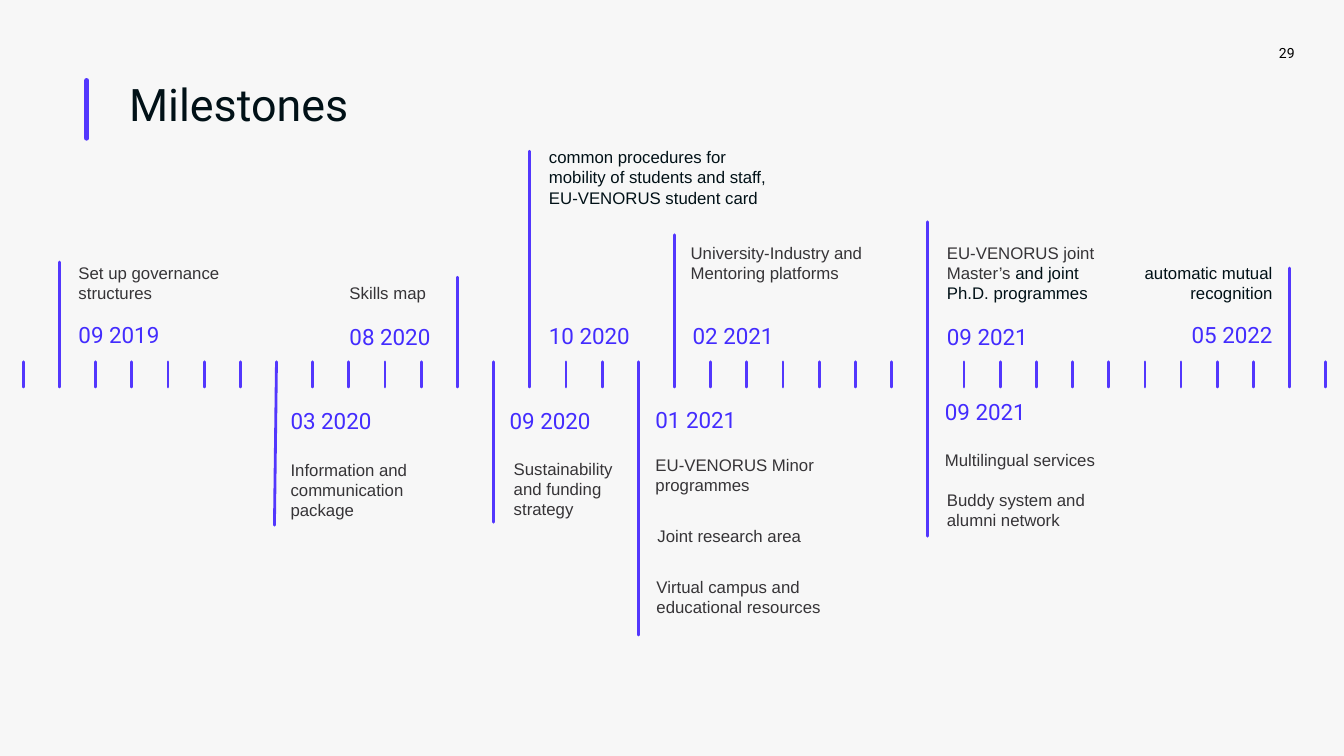
from dataclasses import dataclass

from lxml import etree
from pptx import Presentation
from pptx.dml.color import RGBColor
from pptx.enum.shapes import MSO_CONNECTOR
from pptx.enum.text import MSO_ANCHOR, MSO_AUTO_SIZE, PP_ALIGN
from pptx.oxml.ns import qn
from pptx.util import Inches, Pt

STRAIGHT = MSO_CONNECTOR.STRAIGHT
TOP, MIDDLE = MSO_ANCHOR.TOP, MSO_ANCHOR.MIDDLE
FIXED = MSO_AUTO_SIZE.NONE
LEFT, RIGHT = PP_ALIGN.LEFT, PP_ALIGN.RIGHT


@dataclass(frozen=True)
class Theme:
    back: str = "F7F7F7"
    line: str = "5337FD"
    date: str = "432CFE"
    body: str = "363437"
    dark: str = "011117"
    black: str = "000000"
    head_font: str = "Roboto"
    body_font: str = "Arial"
    title_size: float = 32
    date_size: float = 16
    body_size: float = 12
    number_size: float = 10
    tick_width: float = 2
    bar_width: float = 3.75


@dataclass(frozen=True)
class Note:
    dx: float
    dy: float
    w: float
    lines: int
    text: str
    dark_text: str = ""


@dataclass(frozen=True)
class Milestone:
    month: int
    date: str
    dx: float
    dy: float
    notes: tuple
    align: object = LEFT


T = Theme()
MONTHS = 36
TICK = 0.25
DATE_W, DATE_H = 1.87, 0.37

STEMS = {
    1: (-0.99, TICK), 7: (0, 1.62), 12: (-0.84, TICK),
    13: (0, 1.59), 14: (-2.09, TICK), 17: (0, 2.71),
    18: (-1.26, TICK), 25: (-1.39, 1.73), 35: (-0.93, TICK),
}
LEANS = {7: -0.02}

MILESTONES = (
    Milestone(1, "09 2019", 0.19, -0.45, (
        Note(0.19, -1.03, 1.54, 2, "Set up governance structures"),)),
    Milestone(7, "03 2020", 0.14, 0.4, (
        Note(0.14, 0.92, 1.54, 3, "Information and communication package"),)),
    Milestone(12, "08 2020", -1.07, -0.43, (
        Note(-1.07, -0.83, 1.54, 1, "Skills map"),)),
    Milestone(13, "09 2020", 0.16, 0.4, (
        Note(0.2, 0.91, 1.2, 3, "Sustainability and funding strategy"),)),
    Milestone(14, "10 2020", 0.19, -0.44, (
        Note(0.19, -2.18, 2.32, 3, "", "common procedures for mobility of "
             "students and staff, EU-VENORUS student card"),)),
    Milestone(17, "01 2021", 0.17, 0.39, (
        Note(0.17, 0.87, 1.77, 2, "EU-VENORUS Minor programmes"),
        Note(0.19, 1.58, 1.77, 1, "Joint research area"),
        Note(0.18, 2.08, 2.07, 2, "Virtual campus and educational resources"))),
    Milestone(18, "02 2021", 0.18, -0.44, (
        Note(0.16, -1.23, 1.87, 2, "University-Industry and Mentoring platforms"),)),
    Milestone(25, "09 2021", 0.19, -0.43, (
        Note(0.19, -1.23, 1.7, 3, "EU-VENORUS joint Master’s ",
             "and joint Ph.D. programmes"),)),
    Milestone(25, "09 2021", 0.17, 0.31, (
        Note(0.17, 0.82, 1.77, 1, "Multilingual services"),
        Note(0.19, 1.22, 1.77, 2, "Buddy system and alumni network"))),
    Milestone(35, "05 2022", -2.04, -0.45, (
        Note(-1.56, -1.03, 1.39, 2, "", "automatic mutual recognition"),), RIGHT),
)


def color(value):
    return RGBColor.from_string(value)


def set_font(font, name, size, value):
    font.name, font.size = name, Pt(size)
    font.color.rgb = color(value)


def add_line(s, x1, y1, x2, y2, width):
    line = s.shapes.add_connector(
        STRAIGHT, Inches(x1), Inches(y1), Inches(x2), Inches(y2))
    line.line.color.rgb = color(T.line)
    line.line.width = Pt(width)
    line.line._get_or_add_ln().set("cap", "rnd")
    etree.SubElement(line._element.spPr, qn("a:effectLst"))


def add_text(s, box, parts, name, size, align=LEFT, top=0.05, right=0.1):
    tf = s.shapes.add_textbox(*map(Inches, box)).text_frame
    tf.word_wrap = True
    tf.vertical_anchor = TOP
    tf.margin_left, tf.margin_right = 0, Inches(right)
    tf.margin_top, tf.margin_bottom = Inches(top), Inches(0.05)
    p = tf.paragraphs[0]
    p.alignment = align
    parts = [part for part in parts if part[0]]
    set_font(p.font, name, size, parts[0][1])
    for text, value in parts:
        r = p.add_run()
        r.text = text
        if value != parts[0][1]:
            r.font.color.rgb = color(value)


def add_header(s, x, y, w, h):
    add_line(s, x, y + 0.02, x, y + 0.59, T.bar_width)
    title = s.shapes.title
    title.left, title.top = Inches(x + 0.32), Inches(y)
    title.width, title.height = Inches(w - 0.93), Inches(h)
    tf = title.text_frame
    tf.text = "Milestones"
    tf.auto_size = FIXED
    tf.vertical_anchor = MIDDLE
    p = tf.paragraphs[0]
    p.alignment, p.line_spacing = LEFT, 0.9
    set_font(p.font, T.head_font, T.title_size, T.dark)
    add_text(s, (x + w - 0.61, y - 0.34, 0.61, 0.27), [("29", T.black)],
             T.head_font, T.number_size, RIGHT, 0, 0.05)


def add_milestone(s, m, x, y):
    right = 0 if m.align == RIGHT else 0.1
    add_text(s, (x + m.dx, y + m.dy, DATE_W, DATE_H), [(m.date, T.date)],
             T.head_font, T.date_size, m.align, right=right)
    for note in m.notes:
        box = (x + note.dx, y + note.dy, note.w, 0.1 + 0.2 * note.lines)
        add_text(s, box, [(note.text, T.body), (note.dark_text, T.dark)],
                 T.body_font, T.body_size, m.align, right=right)


def add_timeline(s, x, y, w):
    pitch = w / MONTHS
    for month in range(MONTHS + 1):
        start, end = STEMS.get(month, (0, TICK))
        tick_x = x + month * pitch
        add_line(s, tick_x, y + start, tick_x + LEANS.get(month, 0), y + end,
                 T.tick_width)
    for m in MILESTONES:
        add_milestone(s, m, x + m.month * pitch, y)


def main():
    prs = Presentation()
    prs.slide_width, prs.slide_height = Inches(13.33), Inches(7.5)
    s = prs.slides.add_slide(prs.slide_layouts[5])
    s.background.fill.solid()
    s.background.fill.fore_color.rgb = color(T.back)
    add_header(s, 0.86, 0.78, 12.03, 0.57)
    add_timeline(s, 0.23, 3.59, 12.92)
    prs.save("out.pptx")


if __name__ == "__main__":
    main()
